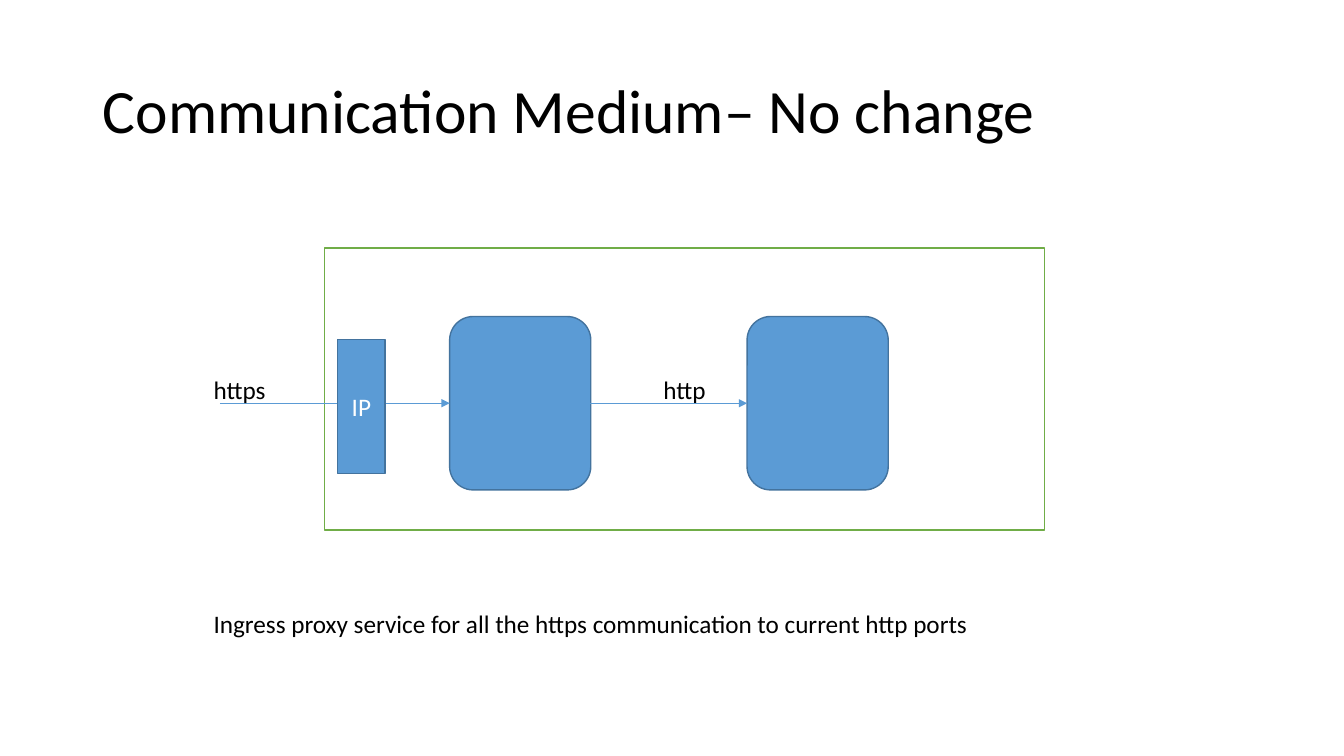
from lxml.etree import SubElement
from pptx import Presentation
from pptx.dml.color import RGBColor
from pptx.enum.shapes import MSO_CONNECTOR, MSO_SHAPE
from pptx.enum.text import MSO_ANCHOR, MSO_AUTO_SIZE, PP_ALIGN
from pptx.oxml.ns import qn
from pptx.util import Inches, Pt

COLORS = {
    "black": "000000",
    "white": "FFFFFF",
    "blue": "5B9BD5",
    "dark_blue": "43739E",
    "green": "70AD47",
}


def write(tf, text, size=18, color="black", align=PP_ALIGN.LEFT, anchor=MSO_ANCHOR.TOP, spacing=None):
    tf.vertical_anchor = anchor
    p = tf.paragraphs[0]
    p.alignment = align
    p.line_spacing = spacing
    r = p.add_run()
    r.text = text
    r.font.size = Pt(size)
    r.font.name = "Calibri"
    r.font.color.rgb = RGBColor.from_string(COLORS[color])


def add_box(kind, x, y, w, h, fill="blue", line="dark_blue"):
    sp = s.shapes.add_shape(kind, Inches(x), Inches(y), Inches(w), Inches(h))
    sp.shadow.inherit = False
    sp.fill.solid()
    sp.fill.fore_color.rgb = RGBColor.from_string(COLORS[fill])
    sp.line.color.rgb = RGBColor.from_string(COLORS[line])
    sp.line.width = Pt(1)
    return sp


prs = Presentation()
prs.slide_width = Inches(13.33)
prs.slide_height = Inches(7.5)
s = prs.slides.add_slide(prs.slide_layouts[5])

title = s.shapes.title
title.left, title.top = Inches(0.92), Inches(0.4)
title.width, title.height = Inches(11.5), Inches(1.45)
title.text_frame.auto_size = MSO_AUTO_SIZE.NONE
write(title.text_frame, "Communication Medium– No change", size=44, anchor=MSO_ANCHOR.MIDDLE, spacing=0.9)

frame = add_box(MSO_SHAPE.RECTANGLE, 3.22, 2.46, 7.14, 2.8, fill="white", line="green")
write(frame.text_frame, "http", align=PP_ALIGN.CENTER, anchor=MSO_ANCHOR.MIDDLE)

services = [add_box(MSO_SHAPE.ROUNDED_RECTANGLE, x, 3.14, 1.4, 1.72) for x in (4.46, 7.41)]

for start, service in zip((2.18, 5.57), services):
    arrow = s.shapes.add_connector(MSO_CONNECTOR.STRAIGHT, Inches(start), Inches(4), service.left, Inches(4))
    arrow.end_connect(service, 1)
    arrow.line.color.rgb = RGBColor.from_string(COLORS["blue"])
    arrow.line.width = Pt(0.5)
    SubElement(arrow.line._get_or_add_ln(), qn("a:tailEnd"), type="triangle")
    SubElement(arrow._element.spPr, qn("a:effectLst"))

for text, y, w in (
    ("https", 3.66, 0.73),
    ("Ingress proxy service for all the https communication to current http ports", 5.99, 7.78),
):
    tf = s.shapes.add_textbox(Inches(2.02), Inches(y), Inches(w), Inches(0.4)).text_frame
    tf.word_wrap = False
    tf.auto_size = MSO_AUTO_SIZE.SHAPE_TO_FIT_TEXT
    write(tf, text)

ip = add_box(MSO_SHAPE.RECTANGLE, 3.35, 3.37, 0.47, 1.33)
write(ip.text_frame, "IP", color="white", align=PP_ALIGN.CENTER, anchor=MSO_ANCHOR.MIDDLE)

prs.save("out.pptx")
